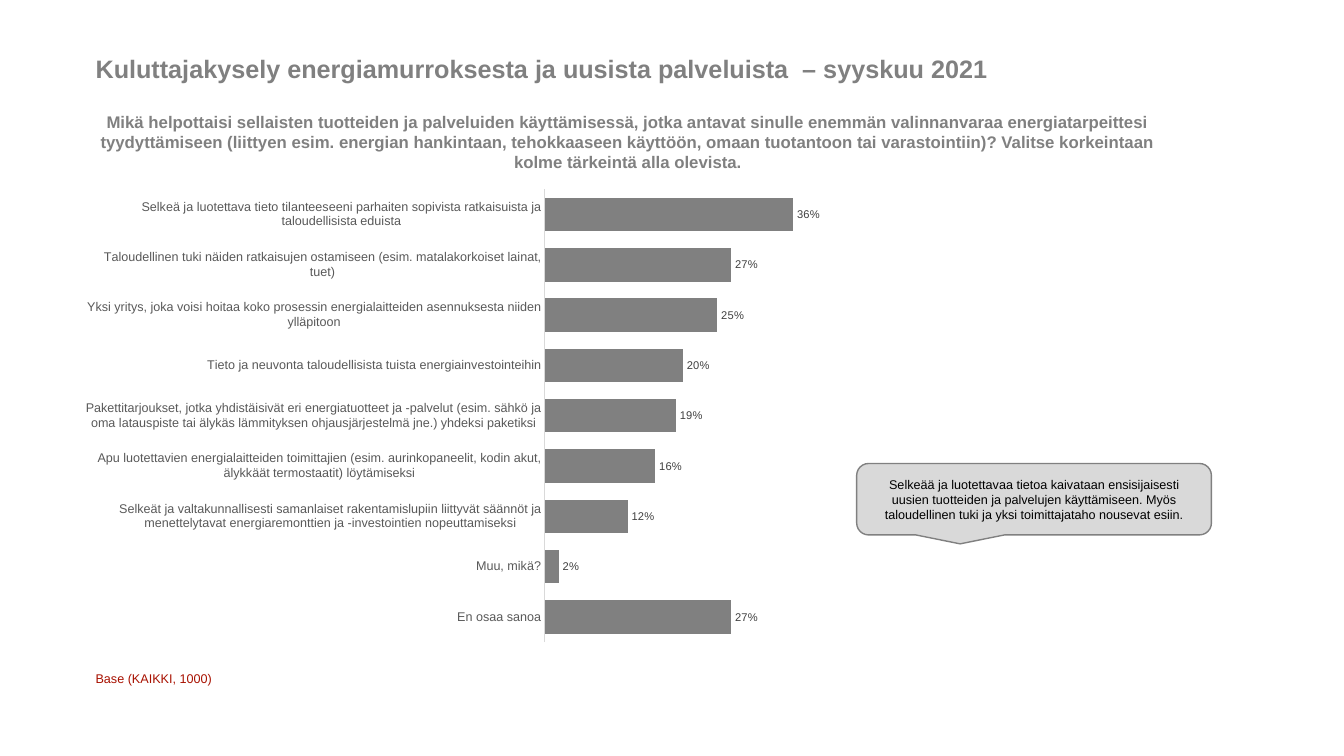
from lxml import etree
from pptx import Presentation
from pptx.chart import data
from pptx.dml.color import RGBColor
from pptx.enum import chart as kinds, shapes, text
from pptx.oxml import ns
from pptx.util import Cm, Pt

GREY = RGBColor(0x80, 0x80, 0x80)
PALE = RGBColor(0xD9, 0xD9, 0xD9)
DARK = RGBColor(0x59, 0x59, 0x59)
INK = RGBColor(0x40, 0x40, 0x40)
BLACK = RGBColor(0, 0, 0)
RED = RGBColor(0xA8, 0x11, 0x00)
LEFT, WIDE = 2.16, 29.54

TITLE = "Kuluttajakysely energiamurroksesta ja uusista palveluista  – syyskuu 2021"
ASK = (
    "Mikä helpottaisi sellaisten tuotteiden ja palveluiden käyttämisessä, jotka antavat "
    "sinulle enemmän valinnanvaraa energiatarpeittesi tyydyttämiseen (liittyen esim. "
    "energian hankintaan, tehokkaaseen käyttöön, omaan tuotantoon tai varastointiin)? "
    "Valitse korkeintaan kolme tärkeintä alla olevista."
)
NOTE = (
    "Selkeää ja luotettavaa tietoa kaivataan ensisijaisesti uusien tuotteiden ja "
    "palvelujen käyttämiseen. Myös taloudellinen tuki ja yksi toimittajataho nousevat esiin."
)
SHARES = {
    "Selkeä ja luotettava tieto tilanteeseeni parhaiten sopivista ratkaisuista ja "
    "taloudellisista eduista": 0.36,
    "Taloudellinen tuki näiden ratkaisujen ostamiseen (esim. matalakorkoiset lainat, "
    "tuet)": 0.27,
    "Yksi yritys, joka voisi hoitaa koko prosessin energialaitteiden asennuksesta niiden "
    "ylläpitoon": 0.25,
    "Tieto ja neuvonta taloudellisista tuista energiainvestointeihin": 0.20,
    "Pakettitarjoukset, jotka yhdistäisivät eri energiatuotteet ja -palvelut (esim. sähkö ja "
    "oma latauspiste tai älykäs lämmityksen ohjausjärjestelmä jne.) yhdeksi paketiksi": 0.19,
    "Apu luotettavien energialaitteiden toimittajien (esim. aurinkopaneelit, kodin akut, "
    "älykkäät termostaatit) löytämiseksi": 0.16,
    "Selkeät ja valtakunnallisesti samanlaiset rakentamislupiin liittyvät säännöt ja "
    "menettelytavat energiaremonttien ja -investointien nopeuttamiseksi": 0.12,
    "Muu, mikä?": 0.02,
    "En osaa sanoa": 0.27,
}


def style(font, size, color, bold=False):
    """Set the face, size, colour and weight of a font."""
    font.name, font.size, font.bold = "Arial", Pt(size), bold
    font.color.rgb = color


def write(shape, words, size, color, bold=False, center=False):
    """Fill a shape with one wrapped paragraph."""
    frame = shape.text_frame
    frame.word_wrap = True
    frame.text = words
    para = frame.paragraphs[0]
    style(para.font, size, color, bold)
    if center:
        para.alignment = text.PP_ALIGN.CENTER
        frame.vertical_anchor = text.MSO_ANCHOR.MIDDLE


def label(slide, top, width, height, words, *look):
    """Add a text box on the left margin."""
    box = slide.shapes.add_textbox(Cm(LEFT), Cm(top), Cm(width), Cm(height))
    write(box, words, *look)


def place(chart, **sides):
    """Fix the inner plot area as shares of the chart."""
    plot = chart._chartSpace.chart.plotArea
    for old in plot.findall(ns.qn("c:layout")):
        plot.remove(old)
    layout = etree.Element(ns.qn("c:layout"))
    plot.insert(0, layout)
    manual = etree.SubElement(layout, ns.qn("c:manualLayout"))
    rules = {"layoutTarget": "inner", "xMode": "edge", "yMode": "edge", **sides}
    for tag, val in rules.items():
        etree.SubElement(manual, ns.qn("c:" + tag)).set("val", str(val))


def bars(slide):
    """Add the bar chart of answer shares."""
    source = data.CategoryChartData(number_format="0%")
    source.categories = list(SHARES)
    source.add_series("Series 1", list(SHARES.values()))
    frame = slide.shapes.add_chart(
        kinds.XL_CHART_TYPE.BAR_CLUSTERED, Cm(LEFT), Cm(4.65), Cm(WIDE), Cm(12.14), source
    )
    chart = frame.chart
    chart.has_legend = chart.has_title = False
    style(chart.font, 10, BLACK)
    place(chart, x=0.39, y=0.01, w=0.59, h=0.94)

    cats = chart.category_axis
    cats.reverse_order = True
    cats.major_tick_mark = kinds.XL_TICK_MARK.NONE
    cats.format.line.color.rgb = PALE
    cats.format.line.width = Pt(0.75)
    style(cats.tick_labels.font, 9, DARK)

    vals = chart.value_axis
    vals.minimum_scale, vals.maximum_scale, vals.major_unit = 0, 1, 0.2
    vals.has_major_gridlines = vals.visible = False

    plot = chart.plots[0]
    plot.gap_width = 50
    plot.vary_by_categories = False
    fill = plot.series[0].format.fill
    fill.solid()
    fill.fore_color.rgb = GREY
    plot.has_data_labels = True
    tags = plot.data_labels
    tags.show_value = True
    tags.number_format, tags.number_format_is_linked = "0%", False
    tags.position = kinds.XL_LABEL_POSITION.OUTSIDE_END
    style(tags.font, 8, INK)


def callout(slide):
    """Add the speech bubble with the main finding."""
    shape = slide.shapes.add_shape(
        shapes.MSO_SHAPE.ROUNDED_RECTANGULAR_CALLOUT, Cm(21.59), Cm(11.68), Cm(8.94), Cm(1.8)
    )
    shape.shadow.inherit = False
    shape.fill.solid()
    shape.fill.fore_color.rgb = PALE
    shape.line.color.rgb = GREY
    shape.line.width = Pt(1)
    write(shape, NOTE, 9, BLACK, False, True)


def main():
    """Build and save the slide."""
    deck = Presentation()
    deck.slide_width, deck.slide_height = Cm(33.87), Cm(19.05)
    slide = deck.slides.add_slide(deck.slide_layouts[6])
    label(slide, 1.22, WIDE, 1.02, TITLE, 18, GREY, True)
    label(slide, 2.67, 27.33, 1.8, ASK, 12, GREY, True, True)
    label(slide, 16.79, WIDE, 0.71, "Base (KAIKKI, 1000)", 9, RED)
    bars(slide)
    callout(slide)
    deck.save("out.pptx")


if __name__ == "__main__":
    main()
